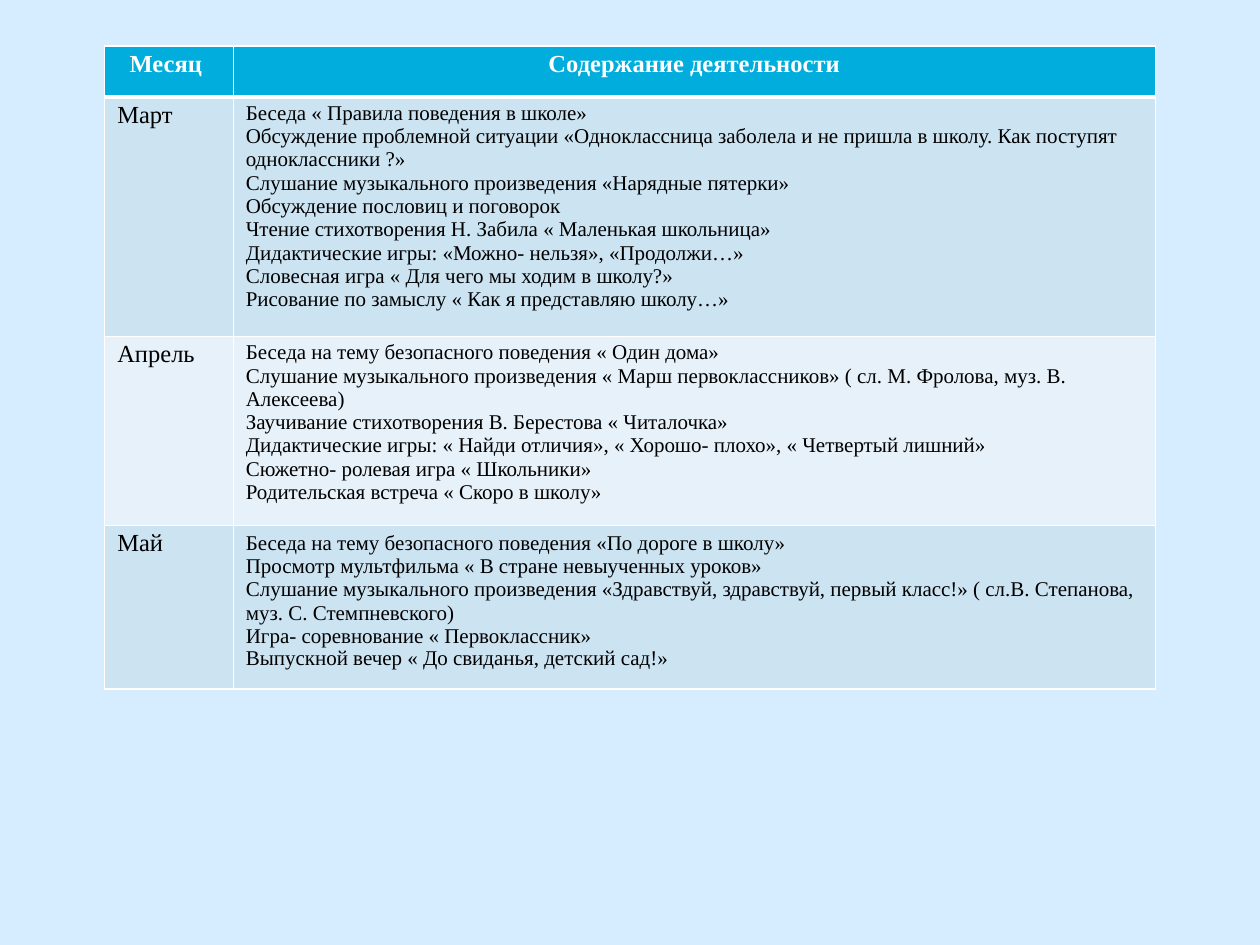
import pptx
import pptx.dml.color
import pptx.enum.text
import pptx.oxml.ns
import pptx.util
from lxml import etree

Pt = pptx.util.Pt
RGBColor = pptx.dml.color.RGBColor
qn = pptx.oxml.ns.qn

BACKGROUND = RGBColor(0xD6, 0xEC, 0xFF)
HEADER = RGBColor(0x00, 0xAD, 0xDC)
BAND_DARK = RGBColor(0xCC, 0xE3, 0xF2)
BAND_LIGHT = RGBColor(0xE7, 0xF1, 0xF9)
WHITE = RGBColor(0xFF, 0xFF, 0xFF)
BLACK = RGBColor(0x00, 0x00, 0x00)

FONT = "Times New Roman"
TIGHT = 0.93
COL_WIDTHS = [73.5, 527]
ROW_HEIGHTS = [29.2, 136.8, 108, 93.6]

ROWS = [
    ("Месяц ", ["Содержание деятельности"]),
    ("Март", [
        "Беседа « Правила поведения в школе»",
        "Обсуждение проблемной ситуации «Одноклассница заболела и не пришла в школу. "
        "Как поступят одноклассники ?»",
        "Слушание музыкального произведения «Нарядные пятерки»",
        "Обсуждение пословиц и поговорок",
        "Чтение стихотворения Н. Забила « Маленькая школьница»",
        "Дидактические игры: «Можно- нельзя», «Продолжи…»",
        "Словесная игра « Для чего мы ходим в школу?»",
        "Рисование по замыслу « Как я представляю школу…»",
    ]),
    ("Апрель", [
        "Беседа на тему безопасного поведения « Один дома»",
        "Слушание музыкального произведения « Марш первоклассников» "
        "( сл. М. Фролова, муз. В. Алексеева)",
        "Заучивание стихотворения В. Берестова « Читалочка»",
        "Дидактические игры: « Найди отличия», « Хорошо- плохо», « Четвертый лишний»",
        "Сюжетно- ролевая игра « Школьники»",
        "Родительская встреча « Скоро в школу»",
    ]),
    ("Май", [
        "Беседа на тему безопасного поведения «По дороге в школу»",
        "Просмотр мультфильма « В стране невыученных уроков»",
        "Слушание музыкального произведения «Здравствуй, здравствуй, первый класс!» "
        "( сл.В. Степанова, муз. С. Стемпневского)",
        "Игра- соревнование « Первоклассник»",
        "Выпускной вечер « До свиданья, детский сад!»",
    ]),
]


def set_borders(cell, widths):
    """Give the cell white borders; widths maps L, R, T, B to points."""
    tc_pr = cell._tc.get_or_add_tcPr()
    for side, width in widths.items():
        ln = etree.SubElement(tc_pr, qn(f"a:ln{side}"), w=str(Pt(width)))
        fill = etree.SubElement(ln, qn("a:solidFill"))
        etree.SubElement(fill, qn("a:srgbClr"), val=str(WHITE))


prs = pptx.Presentation()
prs.slide_width, prs.slide_height = Pt(720), Pt(540)
s = prs.slides.add_slide(prs.slide_layouts[6])
s.background.fill.solid()
s.background.fill.fore_color.rgb = BACKGROUND

table = s.shapes.add_table(
    len(ROWS), len(COL_WIDTHS), Pt(59.8), Pt(26.2),
    Pt(sum(COL_WIDTHS)), Pt(sum(ROW_HEIGHTS))).table
for column, width in zip(table.columns, COL_WIDTHS):
    column.width = Pt(width)
for row, height in zip(table.rows, ROW_HEIGHTS):
    row.height = Pt(height)

for i, (month, activities) in enumerate(ROWS):
    is_header = i == 0
    for j, lines in enumerate([[month], activities]):
        cell = table.cell(i, j)
        set_borders(cell, {"L": 1, "R": 1, "T": 3 if i == 1 else 1,
                           "B": 3 if is_header else 1})
        cell.fill.solid()
        cell.fill.fore_color.rgb = (
            HEADER if is_header else BAND_DARK if i % 2 else BAND_LIGHT)

        tf = cell.text_frame
        tf.text = "\n".join(lines)
        for p in tf.paragraphs:
            p.font.name = FONT
            p.font.size = Pt(14 if is_header or j == 0 else 12)
            p.font.bold = is_header
            p.font.color.rgb = WHITE if is_header else BLACK
            if is_header:
                p.alignment = pptx.enum.text.PP_ALIGN.CENTER
        # May's activities are tightened at the last paragraph, all others at the first
        tight = -1 if month == "Май" else 0
        tf.paragraphs[tight].line_spacing = TIGHT

prs.save("out.pptx")
